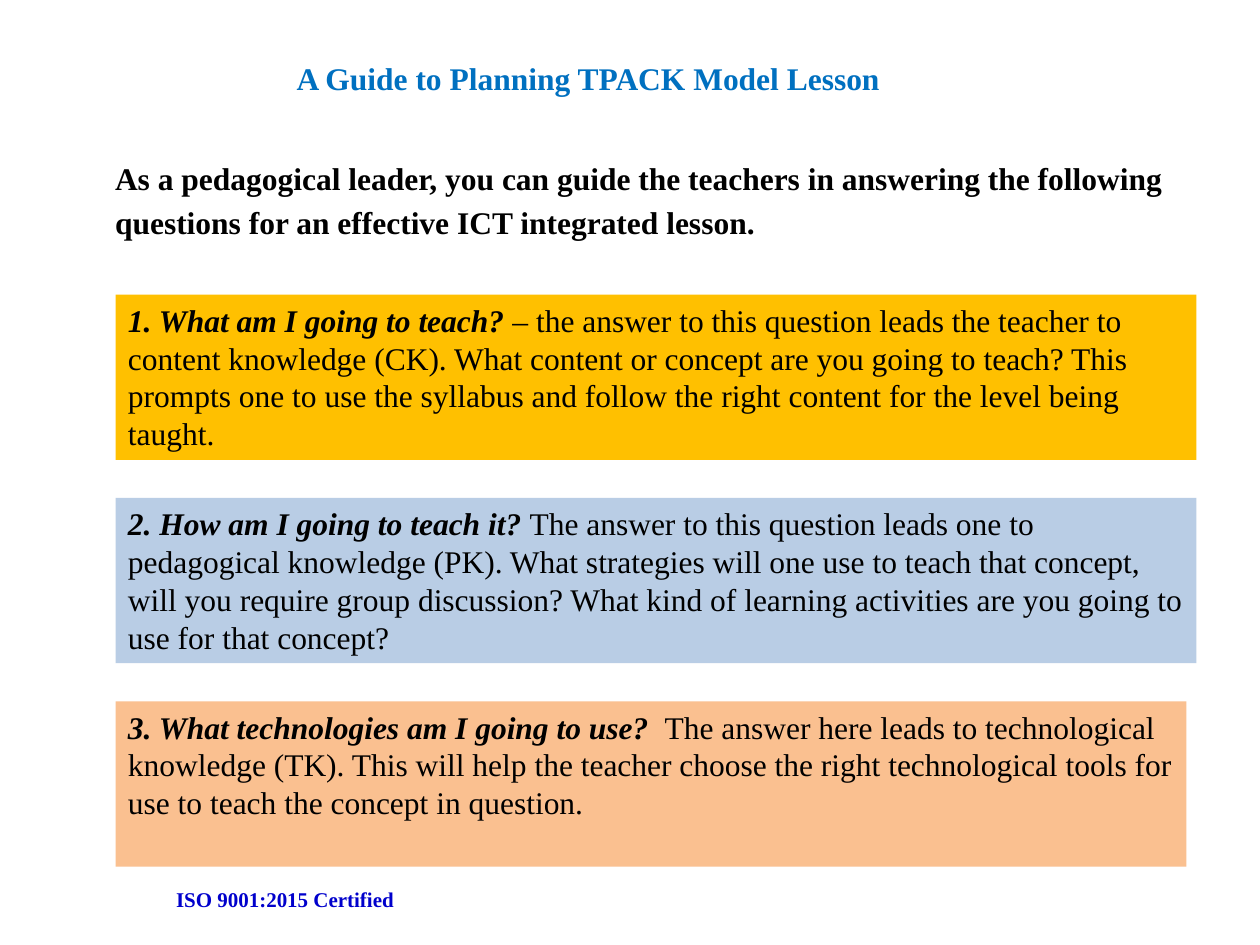
from pptx import Presentation
from pptx.dml.color import RGBColor
from pptx.enum.shapes import MSO_SHAPE
from pptx.enum.text import MSO_ANCHOR, PP_ALIGN
from pptx.util import Cm, Pt

FONT = "Times New Roman"
TITLE = "A Guide to Planning TPACK Model Lesson"
INTRO = ("As a pedagogical leader, you can guide the teachers in answering the "
         "following questions for an effective ICT integrated lesson.")
FOOTER = "ISO 9001:2015 Certified"
QUESTIONS = [
    ("FFC000", 21.79, "1. What am I going to teach? ",
     "– the answer to this question leads the teacher to content knowledge (CK). "
     "What content or concept are you going to teach? This prompts one to use the "
     "syllabus and follow the right content for the level being taught."),
    ("B9CDE5", 21.79, "2. How am I going to teach it? ",
     "The answer to this question leads one to pedagogical knowledge (PK). What "
     "strategies will one use to teach that concept, will you require group "
     "discussion? What kind of learning activities are you going to use for that "
     "concept?"),
    ("FAC090", 21.59, "3. What technologies am I going to use?  ",
     "The answer here leads to technological knowledge (TK). This will help the "
     "teacher choose the right technological tools for use to teach the concept in "
     "question."),
]
CARD_LEFT, CARD_TOP, CARD_HEIGHT, CARD_STEP = 2.33, 5.94, 3.33, 4.1


def rgb(value):
    return RGBColor.from_string(value)


def style(r, size=18, color="000000", bold=True, italic=False):
    f = r.font
    f.name, f.size, f.bold, f.italic = FONT, Pt(size), bold, italic
    f.color.rgb = rgb(color)


def add_text(s, box, text, **look):
    tf = s.shapes.add_textbox(*map(Cm, box)).text_frame
    tf.word_wrap = True
    tf.text = text
    style(tf.paragraphs[0].runs[0], **look)
    return tf


def add_card(s, top, fill, width, question, answer):
    sp = s.shapes.add_shape(MSO_SHAPE.RECTANGLE, Cm(CARD_LEFT), Cm(top),
                            Cm(width), Cm(CARD_HEIGHT))
    sp.shadow.inherit = False
    sp.fill.solid()
    sp.fill.fore_color.rgb = rgb(fill)
    sp.line.fill.background()
    tf = sp.text_frame
    tf.word_wrap = True
    tf.vertical_anchor = MSO_ANCHOR.TOP
    p = tf.paragraphs[0]
    p.alignment = PP_ALIGN.LEFT
    for text, strong in ((question, True), (answer, False)):
        r = p.add_run()
        r.text = text
        style(r, bold=strong, italic=strong)


def main():
    """Build the TPACK lesson planning slide."""
    prs = Presentation()
    prs.slide_width, prs.slide_height = Cm(25.4), Cm(19.05)
    s = prs.slides.add_slide(prs.slide_layouts[6])

    add_text(s, (3.3, 17.75, 13.18, 0.76), FOOTER, size=12, color="0000CC")

    tf = add_text(s, (0.43, 0.84, 22.86, 3.18), TITLE, color="0070C0")
    tf.margin_top = Cm(0.36)
    tf.paragraphs[0].alignment = PP_ALIGN.CENTER

    tf = add_text(s, (1.12, 2.97, 22.86, 12.57), INTRO)
    tf.margin_left = Cm(1.2)
    p = tf.paragraphs[0]
    p.line_spacing, p.space_after = 1.15, Pt(10)

    for i, card in enumerate(QUESTIONS):
        add_card(s, CARD_TOP + i * CARD_STEP, *card)

    prs.save("out.pptx")


if __name__ == "__main__":
    main()
